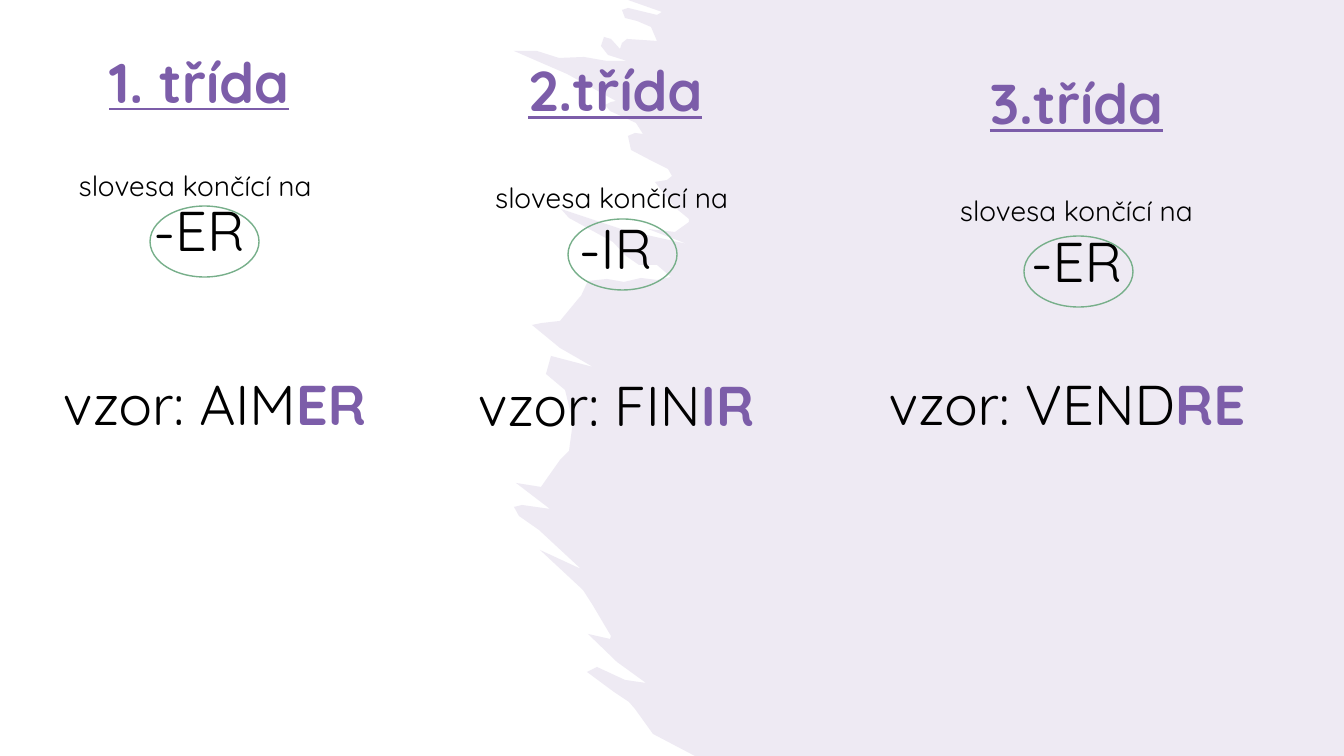
from dataclasses import dataclass

from lxml.etree import SubElement
from pptx import Presentation
from pptx.dml.color import RGBColor
from pptx.enum.shapes import MSO_SHAPE
from pptx.enum.text import PP_ALIGN
from pptx.oxml.ns import qn
from pptx.util import Emu, Pt

SLIDE_W, SLIDE_H = 1344, 756
PX_PER_INCH = 100.8


@dataclass(frozen=True)
class Theme:
    font: str = "Quicksand"
    accent: str = "7C5DA9"
    ink: str = "000000"
    ring: str = "77AF8A"
    brush: str = "AA96C7"
    brush_alpha: int = 20
    large: int = 40
    small: int = 20


THEME = Theme()

# Torn left edge of the brush stroke, from the bottom of the slide to its top
BRUSH_EDGE = [
    (695, 756), (653, 734), (635, 709), (629, 702), (614, 692), (587, 672),
    (597, 667), (625, 680), (646, 683), (617, 662), (588, 634), (610, 639),
    (611, 636), (592, 604), (583, 590), (540, 550), (581, 569), (539, 530),
    (519, 516), (514, 507), (522, 505), (550, 509), (533, 496), (516, 483),
    (541, 487), (548, 477), (560, 460), (569, 451), (573, 422), (565, 390),
    (546, 374), (551, 356), (593, 367), (560, 348), (532, 325), (542, 323),
    (560, 321), (579, 298), (581, 296), (588, 281), (607, 279), (624, 282),
    (641, 278), (657, 280), (671, 277), (657, 265), (639, 265), (626, 256),
    (613, 242), (569, 218), (561, 209), (624, 230), (687, 244), (648, 229),
    (675, 232), (689, 222), (689, 219), (678, 210), (672, 204), (655, 182),
    (667, 180), (672, 176), (668, 169), (650, 160), (631, 150), (628, 136),
    (635, 133), (643, 134), (636, 123), (610, 111), (605, 105), (611, 102),
    (616, 101), (567, 74), (514, 51), (537, 51), (559, 58), (584, 57),
    (607, 61), (627, 61), (608, 55), (601, 46), (604, 37), (611, 39),
    (620, 49), (622, 43), (627, 39), (657, 41), (651, 27), (637, 21),
    (625, 18), (622, 10), (628, 8), (657, 15), (662, 12), (628, 0),
]

# Heading, intro, ending, box (left, top, width), ring offset, line spacing
VERB_CLASSES = [
    ("1. třída", "slovesa končící na ", "-ER", (30, 50, 338), (120, 156), 0.9),
    ("2.třída", "slovesa končící na ", "-IR", (381, 51, 469), (187, 168), 1.0),
    ("3.třída", "slovesa končící na", "-ER", (873, 64, 407), (151, 172), 1.0),
]

# Stem, ending, box (left, top, width), alignment
MODEL_VERBS = [
    ("vzor: AIM", "ER", (53, 365, 338), PP_ALIGN.LEFT),
    ("vzor: FIN", "IR", (468, 366, 407), PP_ALIGN.LEFT),
    ("vzor: VEND", "RE", (836, 365, 462), PP_ALIGN.CENTER),
]


def px(length):
    return Emu(round(length * 914400 / PX_PER_INCH))


def add_text_frame(slide, left, top, width, height):
    frame = slide.shapes.add_textbox(px(left), px(top), px(width), px(height)).text_frame
    frame.word_wrap = True
    return frame


def add_run(paragraph, text, size=THEME.large, color=THEME.ink, bold=False, underline=False):
    run = paragraph.add_run()
    run.text = text
    run.font.name = THEME.font
    run.font.size = Pt(size)
    run.font.bold = bold
    run.font.underline = underline
    run.font.color.rgb = RGBColor.from_string(color)


def add_brush(slide):
    """Translucent brush stroke covering the right side of the slide."""
    builder = slide.shapes.build_freeform(SLIDE_W, SLIDE_H, scale=px(1000) / 1000)
    builder.add_line_segments(BRUSH_EDGE + [(SLIDE_W, 0)], close=True)
    brush = builder.convert_to_shape()
    brush.shadow.inherit = False
    brush.line.fill.background()
    brush.fill.solid()
    brush.fill.fore_color.rgb = RGBColor.from_string(THEME.brush)
    color = brush.fill._xPr.find(qn("a:solidFill"))[0]
    SubElement(color, qn("a:alpha")).set("val", str(THEME.brush_alpha * 1000))


def add_verb_class(slide, heading, intro, ending, box, ring_offset, spacing):
    """Heading, intro and ringed ending of one verb class."""
    left, top, width = box
    frame = add_text_frame(slide, left, top, width, 228)
    heading_line = frame.paragraphs[0]
    intro_line, ending_line = frame.add_paragraph(), frame.add_paragraph()
    add_run(heading_line, heading, color=THEME.accent, bold=True, underline=True)
    add_run(intro_line, intro, size=THEME.small)
    add_run(ending_line, ending)
    for line in frame.paragraphs:
        line.alignment = PP_ALIGN.CENTER
        line.line_spacing = spacing
    intro_line.space_before = px(57)

    # Ring around the ending
    dx, dy = ring_offset
    ring = slide.shapes.add_shape(MSO_SHAPE.OVAL, px(left + dx), px(top + dy), px(109), px(71))
    ring.shadow.inherit = False
    ring.fill.background()
    ring.line.color.rgb = RGBColor.from_string(THEME.ring)
    ring.line.width = Pt(1)


def add_model_verb(slide, stem, ending, box, alignment):
    """Model verb with its ending highlighted."""
    line = add_text_frame(slide, *box, 78).paragraphs[0]
    line.alignment = alignment
    add_run(line, stem)
    add_run(line, ending, color=THEME.accent, bold=True)


def main():
    prs = Presentation()
    prs.slide_width, prs.slide_height = px(SLIDE_W), px(SLIDE_H)
    slide = prs.slides.add_slide(prs.slide_layouts[6])
    add_brush(slide)
    for verb_class in VERB_CLASSES:
        add_verb_class(slide, *verb_class)
    for model_verb in MODEL_VERBS:
        add_model_verb(slide, *model_verb)
    prs.save("out.pptx")


if __name__ == "__main__":
    main()
